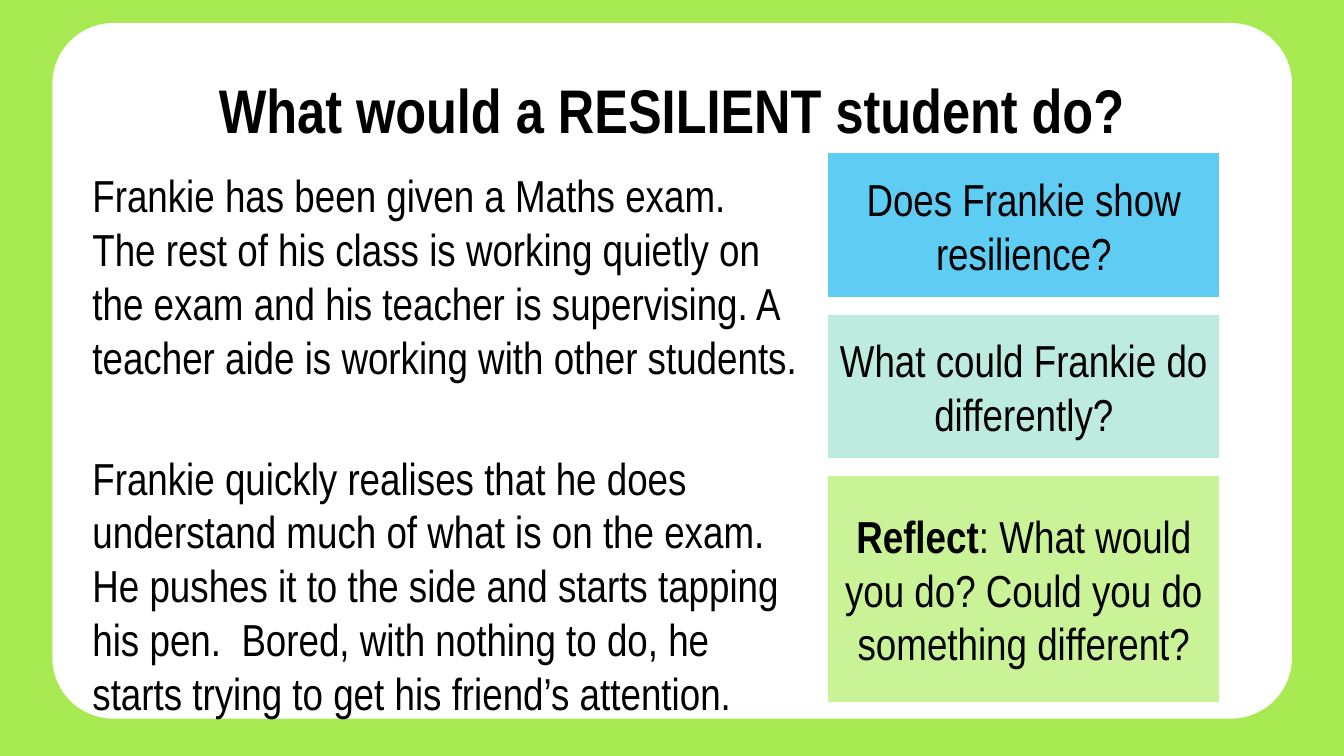
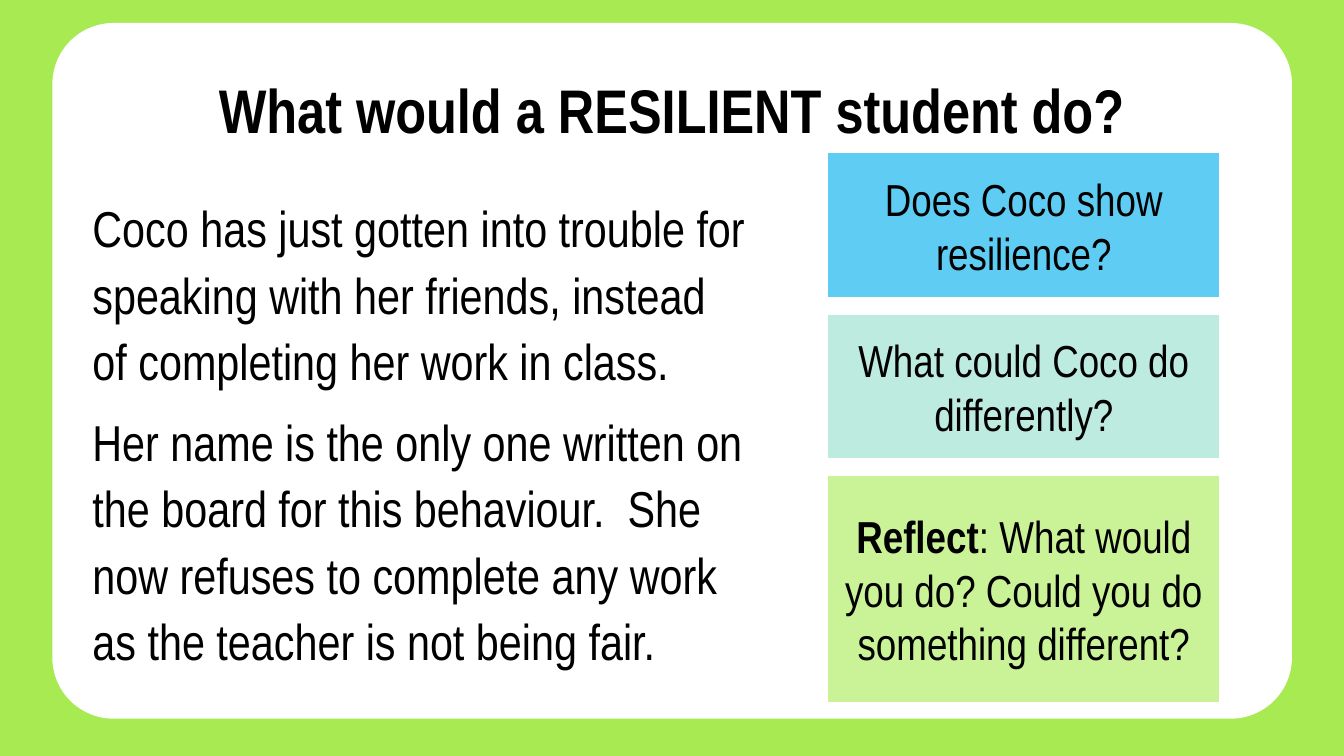
from pptx import Presentation
from pptx.dml.color import RGBColor
from pptx.enum.shapes import MSO_SHAPE
from pptx.enum.text import MSO_ANCHOR, MSO_AUTO_SIZE, PP_ALIGN
from pptx.util import Cm, Pt

RECTANGLE = MSO_SHAPE.RECTANGLE
ROUNDED = MSO_SHAPE.ROUNDED_RECTANGLE
MIDDLE = MSO_ANCHOR.MIDDLE
NO_AUTOFIT = MSO_AUTO_SIZE.NONE
CENTER = PP_ALIGN.CENTER
LEFT = PP_ALIGN.LEFT

FONT = "Arial Narrow"
BLACK, WHITE, LIME = "000000", "FFFFFF", "A7EA52"
SKY, MINT, PALE_GREEN = "5ECCF3", "BEEBDF", "CAF297"
TITLE_ONLY = 5

TITLE = "What would a RESILIENT student do?"
REFLECT = [("Reflect", True), (": What would you do? Could you do something different?", False)]

SCENARIOS = [
    {
        "name": "Frankie",
        "story": [
            "Frankie has been given a Maths exam.  The rest of his class is working quietly on the exam "
            "and his teacher is supervising. A teacher aide is working with other students.",
            "Frankie quickly realises that he does understand much of what is on the exam.  He pushes it "
            "to the side and starts tapping his pen.  Bored, with nothing to do, he starts trying to get "
            "his friend’s attention.",
        ],
        "box": (2.08, 4.11, 18.49, 13.92),
        "size": 32,
        "line_spacing": 1.0,
        "gap": 48,
    },
    {
        "name": "Coco",
        "story": [
            "Coco has just gotten into trouble for speaking with her friends, instead of completing her "
            "work in class.",
            "Her name is the only one written on the board for this behaviour.  She now refuses to "
            "complete any work as the teacher is not being fair.",
        ],
        "box": (2.08, 4.7, 16.97, 13),
        "size": 36,
        "line_spacing": 1.1,
        "gap": 10,
    },
]


def color(hex_string):
    return RGBColor.from_string(hex_string)


def lengths(box):
    return [Cm(value) for value in box]


class Deck:
    def __init__(self):
        self.presentation = Presentation()
        self.presentation.slide_width = Cm(33.87)
        self.presentation.slide_height = Cm(19.05)
        background = self.presentation.slide_master.background.fill
        background.solid()
        background.fore_color.rgb = color(LIME)
        self.slide = None

    def new_slide(self, title):
        layout = self.presentation.slide_layouts[TITLE_ONLY]
        self.slide = self.presentation.slides.add_slide(layout)
        panel = self.shape(ROUNDED, (1.32, 0.58, 31.24, 17.53), WHITE)
        panel.adjustments[0] = 0.088
        self.slide.shapes.element.insert(2, panel.element)
        self.title(title)

    def title(self, text):
        placeholder = self.slide.shapes.title
        placeholder.left, placeholder.top, placeholder.width, placeholder.height = lengths(
            (2.34, 1.02, 29.21, 3.68))
        frame = placeholder.text_frame
        frame.text = text
        frame.auto_size = NO_AUTOFIT
        frame.vertical_anchor = MIDDLE
        self.format(frame.paragraphs[0], 44, CENTER, bold=True, line_spacing=0.9)

    def format(self, paragraph, size, alignment, bold=None, line_spacing=1.0):
        paragraph.alignment = alignment
        paragraph.line_spacing = line_spacing
        for run in paragraph.runs:
            run.font.name = FONT
            run.font.size = Pt(size)
            run.font.color.rgb = color(BLACK)
            if bold is not None:
                run.font.bold = bold

    def shape(self, kind, box, fill):
        shape = self.slide.shapes.add_shape(kind, *lengths(box))
        shape.shadow.inherit = False
        shape.fill.solid()
        shape.fill.fore_color.rgb = color(fill)
        shape.line.fill.background()
        return shape

    def question(self, box, fill, parts):
        shape = self.shape(RECTANGLE, box, fill)
        shape.line.color.rgb = color(WHITE)
        shape.line.width = Pt(1.5)
        frame = shape.text_frame
        frame.word_wrap = True
        frame.vertical_anchor = MIDDLE
        paragraph = frame.paragraphs[0]
        for text, bold in parts:
            run = paragraph.add_run()
            run.text = text
            run.font.bold = bold
        self.format(paragraph, 32, CENTER)

    def story(self, box, texts, size, line_spacing, gap):
        frame = self.slide.shapes.add_textbox(*lengths(box)).text_frame
        frame.word_wrap = True
        frame.text = "\n".join(texts)
        for index, paragraph in enumerate(frame.paragraphs):
            self.format(paragraph, size, LEFT, line_spacing=line_spacing)
            paragraph.space_before = Pt(gap if index else 0)

    def questions(self, name):
        rows = [
            (3.68, SKY, [(f"Does {name} show resilience?", False)]),
            (3.68, MINT, [(f"What could {name} do differently?", False)]),
            (5.77, PALE_GREEN, REFLECT),
        ]
        top = 3.84
        for height, fill, parts in rows:
            self.question((20.85, top, 9.91, height), fill, parts)
            top += height + 0.38


def main():
    deck = Deck()
    for scenario in SCENARIOS:
        deck.new_slide(TITLE)
        deck.story(scenario["box"], scenario["story"], scenario["size"],
                   scenario["line_spacing"], scenario["gap"])
        deck.questions(scenario["name"])
    deck.presentation.save("out.pptx")


if __name__ == "__main__":
    main()
